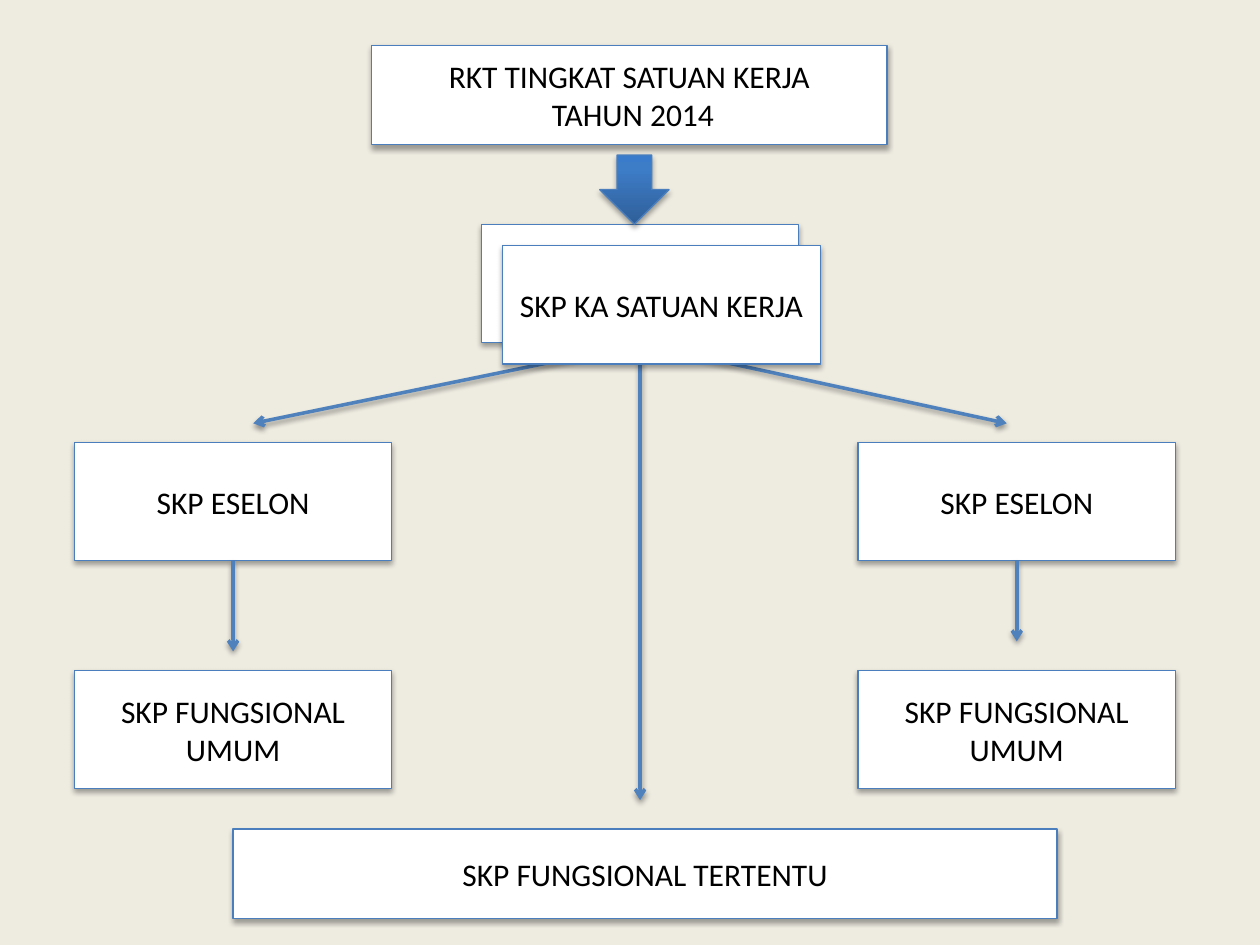
from copy import deepcopy
from dataclasses import dataclass

from pptx import Presentation
from pptx import util as u
from pptx.dml.color import RGBColor
from pptx.enum import shapes, text
from pptx.oxml import parse_xml
from pptx.oxml.ns import nsdecls


@dataclass(frozen=True)
class Theme:
    background: str = "EEECE1"
    box: str = "FFFFFF"
    outline: str = "4B7EBC"
    connector: str = "4F81BD"
    ink: str = "000000"
    gradient: tuple = ((0, "2F5F99"), (0.8, "3D7CC7"), (1, "3A7CCB"))
    font: str = "Calibri"
    size: float = 18
    outline_width: float = 0.75
    connector_width: float = 2


def rgb(value):
    return RGBColor.from_string(value)


def write_text(frame, content, *, font, size, color, align=text.PP_ALIGN.CENTER):
    """Fill a text frame, one paragraph per line of content."""
    frame.word_wrap = True
    frame.vertical_anchor = text.MSO_ANCHOR.MIDDLE
    for index, line in enumerate(content.split("\n")):
        paragraph = frame.add_paragraph() if index else frame.paragraphs[0]
        paragraph.alignment = align
        run = paragraph.add_run()
        run.text = line
        run.font.name, run.font.size = font, u.Pt(size)
        run.font.color.rgb = rgb(color)


def shadow_effect(distance, opacity):
    return parse_xml(
        f'<a:effectLst {nsdecls("a")}><a:outerShdw blurRad="{u.Pt(3.1)}" '
        f'dist="{u.Pt(distance)}" dir="5400000" rotWithShape="0">'
        f'<a:srgbClr val="000000"><a:alpha val="{opacity * 1000}"/></a:srgbClr>'
        f'</a:outerShdw></a:effectLst>')


class Diagram:
    def __init__(self, slide, theme):
        self.slide, self.theme = slide, theme
        slide.background.fill.solid()
        slide.background.fill.fore_color.rgb = rgb(theme.background)

    def _shape(self, kind, left, top, width, height):
        shape = self.slide.shapes.add_shape(
            kind, *map(u.Inches, (left, top, width, height)))
        shape.line.color.rgb = rgb(self.theme.outline)
        shape.line.width = u.Pt(self.theme.outline_width)
        shape._element.spPr.append(shadow_effect(1.8, 35))
        return shape

    def box(self, left, top, width, height, label=""):
        box = self._shape(shapes.MSO_SHAPE.RECTANGLE, left, top, width, height)
        box.fill.solid()
        box.fill.fore_color.rgb = rgb(self.theme.box)
        if label:
            write_text(box.text_frame, label, font=self.theme.font,
                       size=self.theme.size, color=self.theme.ink)

    def block_arrow(self, left, top, side):
        arrow = self._shape(shapes.MSO_SHAPE.DOWN_ARROW, left, top, side, side)
        arrow.fill.gradient()
        arrow.fill.gradient_angle = 90
        # A new gradient has two stops; the theme needs a third
        first = arrow._element.spPr.xpath(".//a:gs")[0]
        first.addnext(deepcopy(first))
        for stop, (position, color) in zip(arrow.fill.gradient_stops,
                                           self.theme.gradient):
            stop.position = position
            stop.color.rgb = rgb(color)

    def arrow(self, start, end):
        arrow = self.slide.shapes.add_connector(
            shapes.MSO_CONNECTOR.STRAIGHT, *map(u.Inches, (*start, *end)))
        arrow.line.color.rgb = rgb(self.theme.connector)
        arrow.line.width = u.Pt(self.theme.connector_width)
        arrow.line._get_or_add_ln().append(
            parse_xml(f'<a:tailEnd {nsdecls("a")} type="arrow"/>'))
        arrow._element.spPr.append(shadow_effect(1.6, 38))


def main():
    deck = Presentation()
    deck.slide_width, deck.slide_height = u.Inches(10), u.Inches(7.5)
    diagram = Diagram(deck.slides.add_slide(deck.slide_layouts[6]), Theme())

    unit_width, unit_height = 2.52, 0.94
    echelon_top, general_top = 3.51, 5.32
    hub = (5.08, 2.73)

    # Annual plan and the rear card of the unit head
    diagram.box(2.95, 0.36, 4.09, 0.79, "RKT TINGKAT SATUAN KERJA\n TAHUN 2014")
    diagram.box(3.82, 1.78, unit_width, unit_height)
    diagram.block_arrow(4.76, 1.23, 0.55)

    # Left and right branches: box left, hub arrow end, lower arrow end
    for left, branch_x, lower_end in ((0.59, 2.01, 5.17), (6.81, 7.99, 5.09)):
        center = left + unit_width / 2
        diagram.box(left, echelon_top, unit_width, unit_height, "SKP ESELON")
        diagram.box(left, general_top, unit_width, unit_height,
                    "SKP FUNGSIONAL UMUM")
        diagram.arrow(hub, (branch_x, 3.36))
        diagram.arrow((center, echelon_top + unit_height), (center, lower_end))

    # Central branch
    diagram.box(1.85, 6.58, 6.54, 0.71, "SKP FUNGSIONAL TERTENTU")
    diagram.arrow(hub, (hub[0], 6.35))

    # Front card of the unit head covers the start of the arrows
    diagram.box(3.99, 1.95, unit_width, unit_height, "SKP KA SATUAN KERJA")

    deck.save("out.pptx")


if __name__ == "__main__":
    main()
